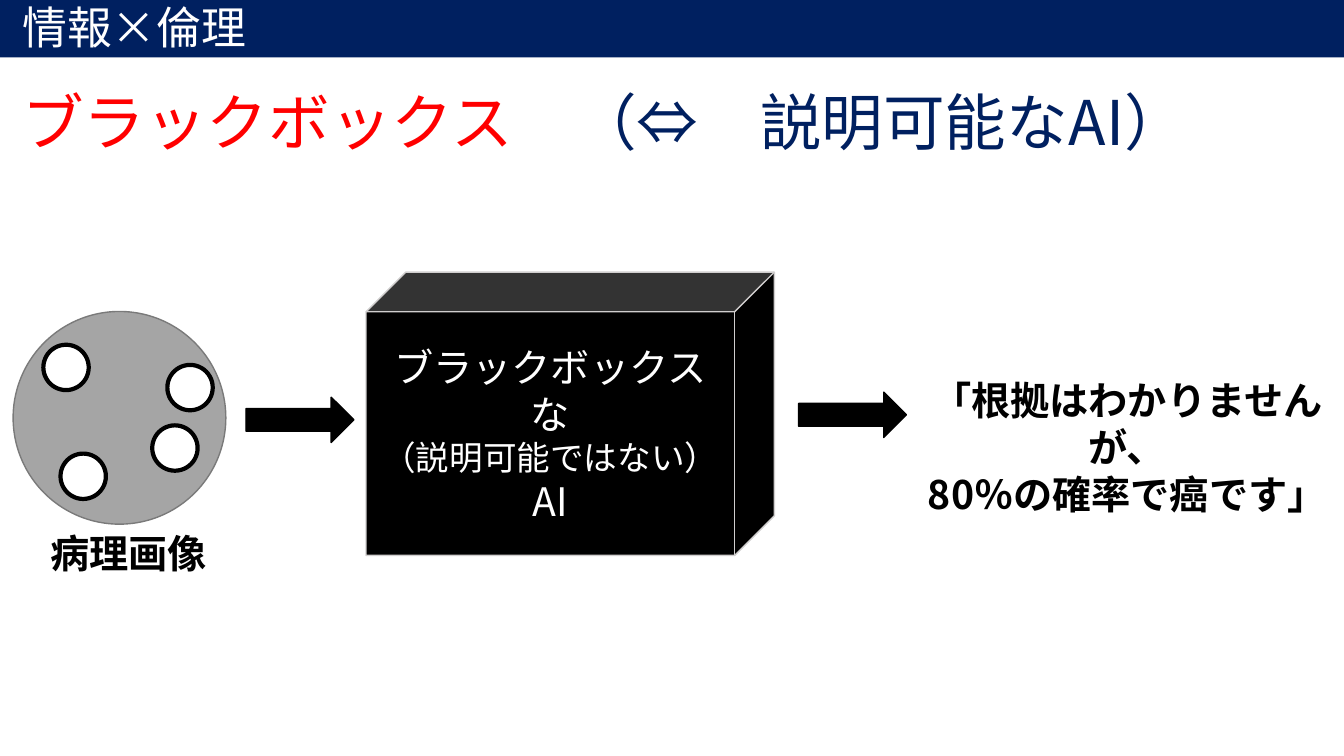
from dataclasses import dataclass
from typing import NamedTuple

import pptx
import pptx.dml.color
import pptx.enum.shapes
import pptx.enum.text
import pptx.oxml.ns
import pptx.util
from lxml import etree

PX = 9144  # EMU per px, at 100 px to the inch
KIND = pptx.enum.shapes.MSO_SHAPE
ALIGN = pptx.enum.text.PP_ALIGN
ANCHOR = pptx.enum.text.MSO_ANCHOR


@dataclass(frozen=True)
class Theme:
    font: str = "Noto Sans CJK JP"
    navy: str = "002060"
    red: str = "FF0000"
    white: str = "FFFFFF"
    black: str = "000000"
    tissue: str = "A5A5A5"
    tissue_edge: str = "7A7A7A"
    box_edge: str = "D0CECE"
    heading: int = 44
    header: int = 32
    label: int = 28
    note: int = 24


class Box(NamedTuple):
    left: int
    top: int
    width: int
    height: int


class Words(NamedTuple):
    text: str
    size: int
    color: str
    bold: bool = False


class Figure(NamedTuple):
    kind: KIND
    box: Box
    fill: str
    edge: str | None = None
    edge_pt: int = 1


THEME = Theme()


def rgb(color: str) -> pptx.dml.color.RGBColor:
    return pptx.dml.color.RGBColor.from_string(color)


def emu(box: Box) -> list[pptx.util.Emu]:
    return [pptx.util.Emu(length * PX) for length in box]


def draw(slide, figure: Figure):
    shape = slide.shapes.add_shape(figure.kind, *emu(figure.box))
    shape.shadow.inherit = False
    shape.fill.solid()
    shape.fill.fore_color.rgb = rgb(figure.fill)
    if figure.edge:
        shape.line.color.rgb = rgb(figure.edge)
        shape.line.width = pptx.util.Pt(figure.edge_pt)
    else:
        shape.line.fill.background()
    return shape


def write(frame, lines: list[list[Words]], align: ALIGN, anchor: ANCHOR) -> None:
    frame_format = {
        "word_wrap": True,
        "auto_size": pptx.enum.text.MSO_AUTO_SIZE.NONE,
        "vertical_anchor": anchor,
    }
    for name, value in frame_format.items():
        setattr(frame, name, value)
    for index, line in enumerate(lines):
        paragraph = frame.add_paragraph() if index else frame.paragraphs[0]
        paragraph.alignment = align
        for words in line:
            run = paragraph.add_run()
            run.text = words.text
            run_format = {
                "name": THEME.font,
                "size": pptx.util.Pt(words.size),
                "bold": words.bold,
            }
            for name, value in run_format.items():
                setattr(run.font, name, value)
            run.font.color.rgb = rgb(words.color)
            # Japanese glyphs take the East Asian typeface
            east_asian = etree.SubElement(run.font._element, pptx.oxml.ns.qn("a:ea"))
            east_asian.set("typeface", THEME.font)


def add_text(slide, box: Box, lines: list[list[Words]], align: ALIGN) -> None:
    frame = slide.shapes.add_textbox(*emu(box)).text_frame
    write(frame, lines, align, ANCHOR.TOP)


def add_header(slide) -> None:
    header = slide.shapes.title
    bar = draw(slide, Figure(KIND.RECTANGLE, Box(0, 0, 1333, 57), THEME.navy))
    header.element.addprevious(bar.element)
    header.left, header.top, header.width, header.height = emu(Box(12, 6, 1310, 47))
    words = Words("情報×倫理", THEME.header, THEME.white)
    write(header.text_frame, [[words]], ALIGN.LEFT, ANCHOR.MIDDLE)
    header.text_frame.paragraphs[0].line_spacing = 0.9


def add_pathology_image(slide) -> None:
    draw(slide, Figure(KIND.OVAL, Box(13, 309, 211, 211), THEME.tissue, THEME.tissue_edge))
    for left, top in ((43, 342), (166, 362), (151, 422), (60, 450)):
        draw(slide, Figure(KIND.OVAL, Box(left, top, 45, 45), THEME.white, THEME.black, 3))
    caption = Words("病理画像", THEME.label, THEME.black, True)
    add_text(slide, Box(39, 520, 177, 57), [[caption]], ALIGN.CENTER)


def add_black_box(slide) -> None:
    black_box = draw(
        slide, Figure(KIND.CUBE, Box(363, 270, 405, 281), THEME.black, THEME.box_edge)
    )
    black_box.adjustments[0] = 0.14
    lines = [
        [Words("ブラックボックスな", THEME.label, THEME.white)],
        [Words("（説明可能ではない）", THEME.note, THEME.white)],
        [Words("AI", THEME.label, THEME.white)],
    ]
    write(black_box.text_frame, lines, ALIGN.CENTER, ANCHOR.MIDDLE)


def main() -> None:
    deck = pptx.Presentation()
    deck.slide_width, deck.slide_height = emu(Box(0, 0, 1333, 750))[2:]
    slide = deck.slides.add_slide(deck.slide_layouts.get_by_name("Title Only"))

    # Header and heading
    add_header(slide)
    heading = [
        Words("ブラックボックス　", THEME.heading, THEME.red),
        Words("（⇔　説明可能なAI）", THEME.heading, THEME.navy),
    ]
    add_text(slide, Box(12, 78, 1322, 84), [heading], ALIGN.LEFT)

    # Input, model and the arrows around it
    add_pathology_image(slide)
    add_black_box(slide)
    for left, top in ((244, 394), (792, 389)):
        arrow = Box(left, top, 107, 45)
        draw(slide, Figure(KIND.RIGHT_ARROW, arrow, THEME.black, THEME.black))

    # Verdict
    verdict = [
        [Words(text, THEME.label, THEME.black, True)]
        for text in ("「根拠はわかりませんが、", "80％の確率で癌です」")
    ]
    add_text(slide, Box(899, 368, 438, 104), verdict, ALIGN.CENTER)

    deck.save("out.pptx")


if __name__ == "__main__":
    main()
